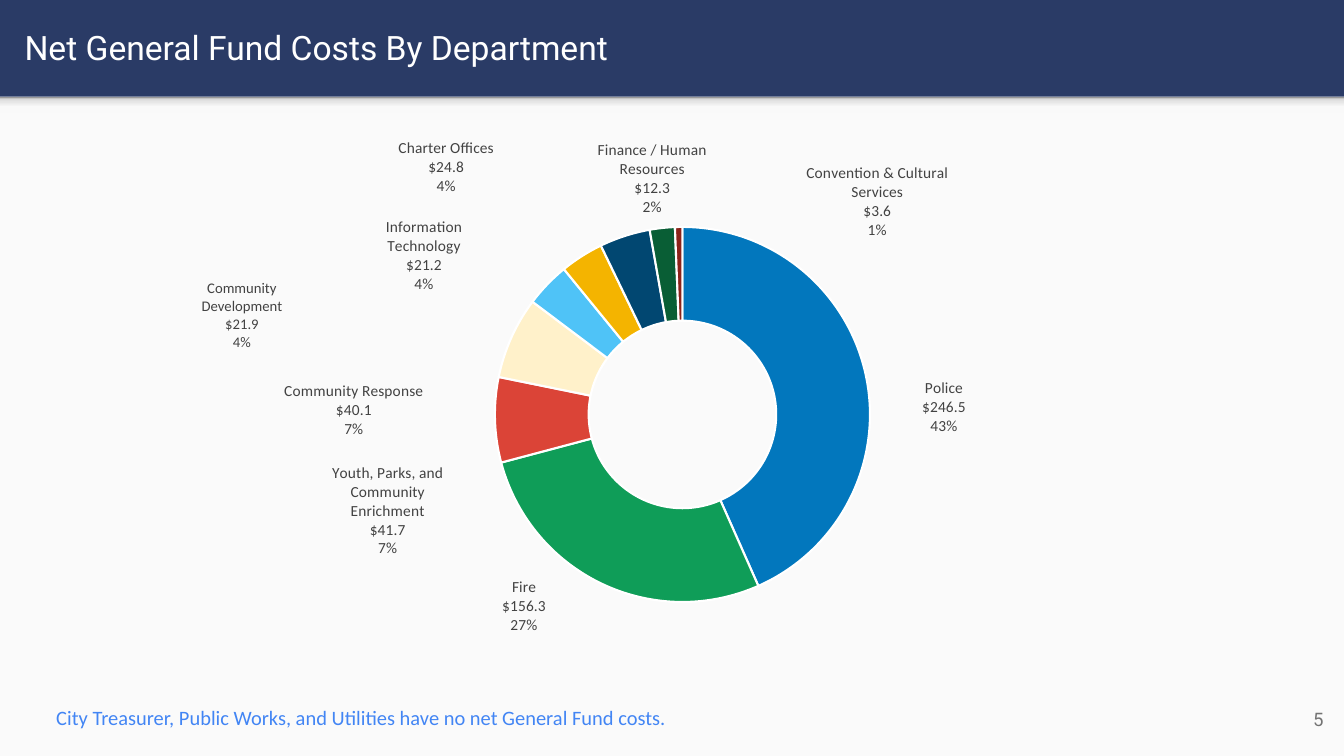
import math
from dataclasses import dataclass

import pptx
import pptx.chart.data
import pptx.dml.color
import pptx.enum.chart
import pptx.enum.shapes
import pptx.enum.text
import pptx.oxml
import pptx.oxml.ns
import pptx.util
from pptx.util import Pt


@dataclass(frozen=True)
class Theme:
    navy: str = "2A3B66"
    panel: str = "FAFAFA"
    white: str = "FFFFFF"
    grey: str = "737373"
    label: str = "424242"
    accent: str = "4285F4"
    heading_font: str = "Roboto"
    body_font: str = "Calibri"
    title_size: float = 24
    note_size: float = 14.6
    number_size: float = 13.3
    label_size: float = 11
    small_label_size: float = 10.5


THEME = Theme()
WIDTH, HEIGHT = 960, 540
BAND_HEIGHT = 69
CHART_BOX = (14, 84.4, 923, 394.6)
RING_CENTRE = (487.2, 295.7)
RING_RADIUS = 100  # middle of the ring, where labels sit by default
PLOT = {"x": 0.35, "y": 0.197, "w": 0.326, "h": 0.679}

# Department, cost in $M, colour, label centre, label width, label size
DEPARTMENTS = [
    ("Police", 246.5, "0277BD", (673.6, 290.7), 100, THEME.label_size),
    ("Fire", 156.3, "0F9D58", (374.3, 432.4), 100, THEME.label_size),
    ("Youth, Parks, and Community Enrichment", 41.7, "DB4437", (277.1, 364.6), 100, THEME.label_size),
    ("Community Response", 40.1, "FFF1CA", (252.9, 292.9), 130, THEME.label_size),
    ("Community Development", 21.9, "4FC3F7", (172.9, 225.4), 90, THEME.small_label_size),
    ("Information Technology", 21.2, "F4B400", (302.9, 182.9), 90, THEME.label_size),
    ("Charter Offices", 24.8, "014771", (318.6, 119.3), 100, THEME.label_size),
    ("Finance / Human Resources", 12.3, "095E35", (465.7, 127.9), 100, THEME.label_size),
    ("Convention & Cultural Services", 3.6, "8B2219", (626.4, 144.3), 125, THEME.label_size),
]


def rgb(value):
    return pptx.dml.color.RGBColor.from_string(value)


def style_font(font, size, face, colour):
    font.size, font.name = Pt(size), face
    font.color.rgb = rgb(colour)


def chart_xml(markup):
    """Parse chart markup whose outer element gets the namespaces it needs."""
    tag, rest = markup.split(">", 1)
    return pptx.oxml.parse_xml(f"{tag} {pptx.oxml.ns.nsdecls('c', 'a')}>{rest}")


def add_text(slide, box, text, size, face, colour, align, inset=(7.2, 7.2)):
    frame = slide.shapes.add_textbox(*map(Pt, box)).text_frame
    frame.word_wrap = True
    frame.vertical_anchor = pptx.enum.text.MSO_ANCHOR.MIDDLE
    frame.margin_left = frame.margin_right = Pt(inset[0])
    frame.margin_top = frame.margin_bottom = Pt(inset[1])
    paragraph = frame.paragraphs[0]
    paragraph.alignment = align
    run = paragraph.add_run()
    run.text = text
    style_font(run.font, size, face, colour)


def add_panel(slide, box, colour):
    panel = slide.shapes.add_shape(pptx.enum.shapes.MSO_SHAPE.RECTANGLE, *map(Pt, box))
    panel.shadow.inherit = False
    panel.fill.solid()
    panel.fill.fore_color.rgb = rgb(colour)
    panel.line.fill.background()
    return panel


def add_band_shade(slide, box):
    """A strip that darkens towards its upper edge."""
    shade = add_panel(slide, box, THEME.panel)
    stops = [(0, "F9F9F9"), (36, "F9F9F9"), (80, "DEDEDE"), (100, "999999")]
    stop_markup = "".join(
        f'<a:gs pos="{place * 1000}"><a:srgbClr val="{colour}"/></a:gs>' for place, colour in stops)
    gradient = pptx.oxml.parse_xml(
        f'<a:gradFill {pptx.oxml.ns.nsdecls("a")}><a:gsLst>{stop_markup}</a:gsLst>'
        '<a:lin ang="16200000" scaled="0"/></a:gradFill>')
    properties = shade.fill._xPr
    properties.replace(properties.find(pptx.oxml.ns.qn("a:solidFill")), gradient)


def label_settings(size):
    """Text style and contents shared by every label."""
    return (
        '<c:spPr><a:noFill/><a:ln><a:noFill/></a:ln></c:spPr>'
        f'<c:txPr><a:bodyPr wrap="square"/><a:p><a:pPr><a:defRPr sz="{round(size * 100)}" b="0">'
        f'<a:solidFill><a:srgbClr val="{THEME.label}"/></a:solidFill>'
        f'<a:latin typeface="{THEME.body_font}"/></a:defRPr></a:pPr>'
        '<a:endParaRPr lang="en-US"/></a:p></c:txPr>'
        '<c:showLegendKey val="0"/><c:showVal val="1"/><c:showCatName val="1"/>'
        '<c:showSerName val="0"/><c:showPercent val="1"/><c:showBubbleSize val="0"/>'
        '<c:separator>\n</c:separator>')


def label_markup():
    """Labels moved from the ring to their own centres."""
    total = sum(row[1] for row in DEPARTMENTS)
    running, labels = 0, ""
    for index, (_, cost, _, centre, width, size) in enumerate(DEPARTMENTS):
        angle = 2 * math.pi * (running + cost / 2) / total
        running += cost
        shift_x = (centre[0] - RING_CENTRE[0] - RING_RADIUS * math.sin(angle)) / CHART_BOX[2]
        shift_y = (centre[1] - RING_CENTRE[1] + RING_RADIUS * math.cos(angle)) / CHART_BOX[3]
        labels += (
            f'<c:dLbl><c:idx val="{index}"/><c:layout><c:manualLayout>'
            f'<c:x val="{shift_x:.4f}"/><c:y val="{shift_y:.4f}"/></c:manualLayout></c:layout>'
            f'{label_settings(size)}<c:extLst><c:ext uri="{{CE6537A1-D6FC-4f65-9D91-7224C49458BB}}" '
            'xmlns:c15="http://schemas.microsoft.com/office/drawing/2012/chart"><c15:layout>'
            f'<c:manualLayout><c:w val="{width / CHART_BOX[2]:.4f}"/><c:h val="0.2"/>'
            '</c:manualLayout></c15:layout></c:ext></c:extLst></c:dLbl>')
    return (f'<c:dLbls>{labels}{label_settings(THEME.label_size)}'
            '<c:showLeaderLines val="0"/></c:dLbls>')


def add_cost_ring(slide):
    costs = pptx.chart.data.CategoryChartData(number_format='"$"#,##0.0')
    costs.categories = [row[0] for row in DEPARTMENTS]
    costs.add_series("Series 1", [row[1] for row in DEPARTMENTS])
    chart = slide.shapes.add_chart(
        pptx.enum.chart.XL_CHART_TYPE.DOUGHNUT, *map(Pt, CHART_BOX), costs).chart
    chart.has_legend = chart.has_title = False
    style_font(chart.font, 10, THEME.body_font, THEME.accent)
    ring = chart.plots[0]
    ring.vary_by_categories = True
    ring._element.find(pptx.oxml.ns.qn("c:holeSize")).set("val", "50")

    # Slices
    series = ring.series[0]
    for index, row in enumerate(DEPARTMENTS):
        slice_format = series.points[index].format
        slice_format.fill.solid()
        slice_format.fill.fore_color.rgb = rgb(row[2])
        slice_format.line.color.rgb = rgb(THEME.white)
        slice_format.line.width = Pt(1.5)

    # Labels
    categories = series._element.find(pptx.oxml.ns.qn("c:cat"))
    categories.addprevious(chart_xml(label_markup()))

    # Plot position
    plot_area = ring._element.getparent()
    for old_layout in plot_area.findall(pptx.oxml.ns.qn("c:layout")):
        plot_area.remove(old_layout)
    places = "".join(f'<c:{key} val="{value}"/>' for key, value in PLOT.items())
    plot_area.insert(0, chart_xml(
        '<c:layout><c:manualLayout><c:layoutTarget val="inner"/><c:xMode val="edge"/>'
        f'<c:yMode val="edge"/>{places}</c:manualLayout></c:layout>'))


def main():
    deck = pptx.Presentation()
    deck.slide_width, deck.slide_height = Pt(WIDTH), Pt(HEIGHT)
    slide = deck.slides.add_slide(deck.slide_layouts[6])
    left, right = pptx.enum.text.PP_ALIGN.LEFT, pptx.enum.text.PP_ALIGN.RIGHT

    # Title band and page
    slide.background.fill.solid()
    slide.background.fill.fore_color.rgb = rgb(THEME.navy)
    add_panel(slide, (0, BAND_HEIGHT, WIDTH, HEIGHT - BAND_HEIGHT), THEME.panel)
    add_band_shade(slide, (0, BAND_HEIGHT, WIDTH, 11.5))
    add_text(slide, (10.5, 2, 926.6, 63.4), "Net General Fund Costs By Department",
             THEME.title_size, THEME.heading_font, THEME.white, left)

    # Page number
    add_text(slide, (895, 493.2, 57.6, 41), "5",
             THEME.number_size, THEME.heading_font, THEME.grey, right)

    # Costs and note
    add_cost_ring(slide)
    add_text(slide, (33.1, 499.7, 880.6, 25.2),
             "City Treasurer, Public Works, and Utilities have no net General Fund costs.",
             THEME.note_size, THEME.body_font, THEME.accent, left, (7.2, 3.6))

    deck.save("out.pptx")


if __name__ == "__main__":
    main()
